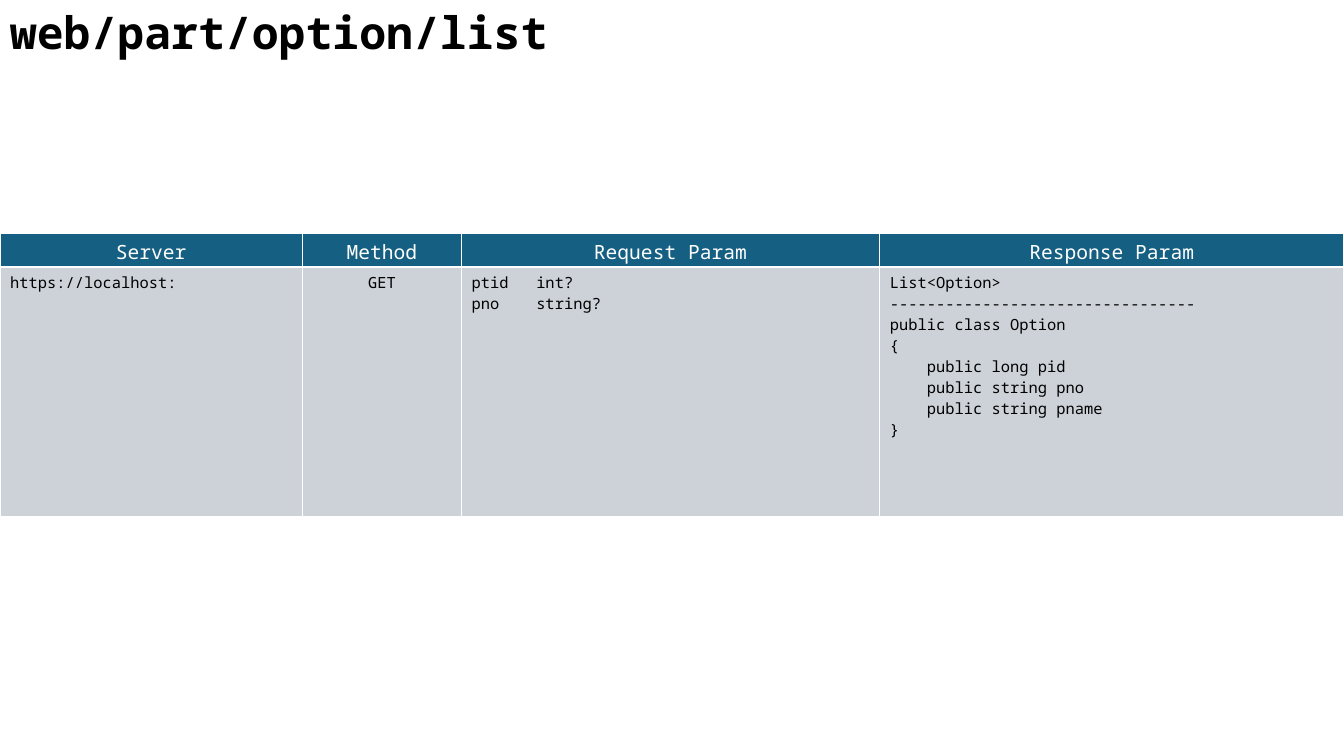
from lxml import etree
from pptx import Presentation
from pptx.dml.color import RGBColor
from pptx.enum.text import MSO_AUTO_SIZE, PP_ALIGN
from pptx.oxml.ns import qn
from pptx.util import Cm, Pt

LEFT, CENTER = PP_ALIGN.LEFT, PP_ALIGN.CENTER
FONT = "Noto Sans Mono"
COLORS = {"text": "000000", "white": "FFFFFF", "header": "156082", "body": "CCD2D8"}


def write(tf, text, size, color="text", bold=False, align=LEFT, tab=None):
    """Fill a text frame, one paragraph per line."""
    for i, line in enumerate(text.split("\n")):
        p = tf.paragraphs[0] if i == 0 else tf.add_paragraph()
        p.alignment = align
        if tab is not None:
            tabs = etree.SubElement(p._p.get_or_add_pPr(), qn("a:tabLst"))
            etree.SubElement(tabs, qn("a:tab"), pos=str(int(tab)), algn="l")
        r = p.add_run()
        r.text = line
        r.font.name = FONT
        r.font.size = Pt(size)
        r.font.bold = bold
        r.font.color.rgb = RGBColor.from_string(COLORS[color])


def style_cell(cell, fill):
    """Draw thin white borders, then fill the cell."""
    tcPr = cell._tc.get_or_add_tcPr()
    for side in ("lnL", "lnR", "lnT", "lnB"):
        ln = etree.SubElement(tcPr, qn(f"a:{side}"), w=str(int(Pt(1))))
        solid = etree.SubElement(ln, qn("a:solidFill"))
        etree.SubElement(solid, qn("a:srgbClr"), val=COLORS["white"])
    cell.fill.solid()
    cell.fill.fore_color.rgb = RGBColor.from_string(COLORS[fill])


prs = Presentation()
prs.slide_width, prs.slide_height = Cm(33.87), Cm(19.05)
s = prs.slides.add_slide(prs.slide_layouts[6])

# Title
title = s.shapes.add_textbox(0, 0, Cm(24), Cm(1.62))
tf = title.text_frame
tf.word_wrap = True
tf.auto_size = MSO_AUTO_SIZE.SHAPE_TO_FIT_TEXT
write(tf, "web/part/option/list", 32, bold=True)

# Table columns: heading, width in cm, body text, body alignment, tab stop
response = """List<Option>
---------------------------------
public class Option
{
    public long pid
    public string pno
    public string pname
}"""
columns = [
    ("Server", 7.62, "https://localhost:", LEFT, None),
    ("Method", 4.01, "GET", CENTER, None),
    ("Request Param", 10.54, "ptid\tint?\npno\tstring?", LEFT, Cm(1.63)),
    ("Response Param", 11.7, response, LEFT, None),
]
row_heights = [0.84, 6.3]

# API table
frame = s.shapes.add_table(len(row_heights), len(columns), 0, Cm(5.88),
                           prs.slide_width, Cm(sum(row_heights)))
table = frame.table
table.horz_banding = False
for row, height in zip(table.rows, row_heights):
    row.height = Cm(height)
for i, (heading, width, body, align, tab) in enumerate(columns):
    table.columns[i].width = Cm(width)
    head_cell, body_cell = table.cell(0, i), table.cell(1, i)
    style_cell(head_cell, "header")
    write(head_cell.text_frame, heading, 14, color="white", align=CENTER)
    style_cell(body_cell, "body")
    write(body_cell.text_frame, body, 11, align=align, tab=tab)

prs.save("out.pptx")
